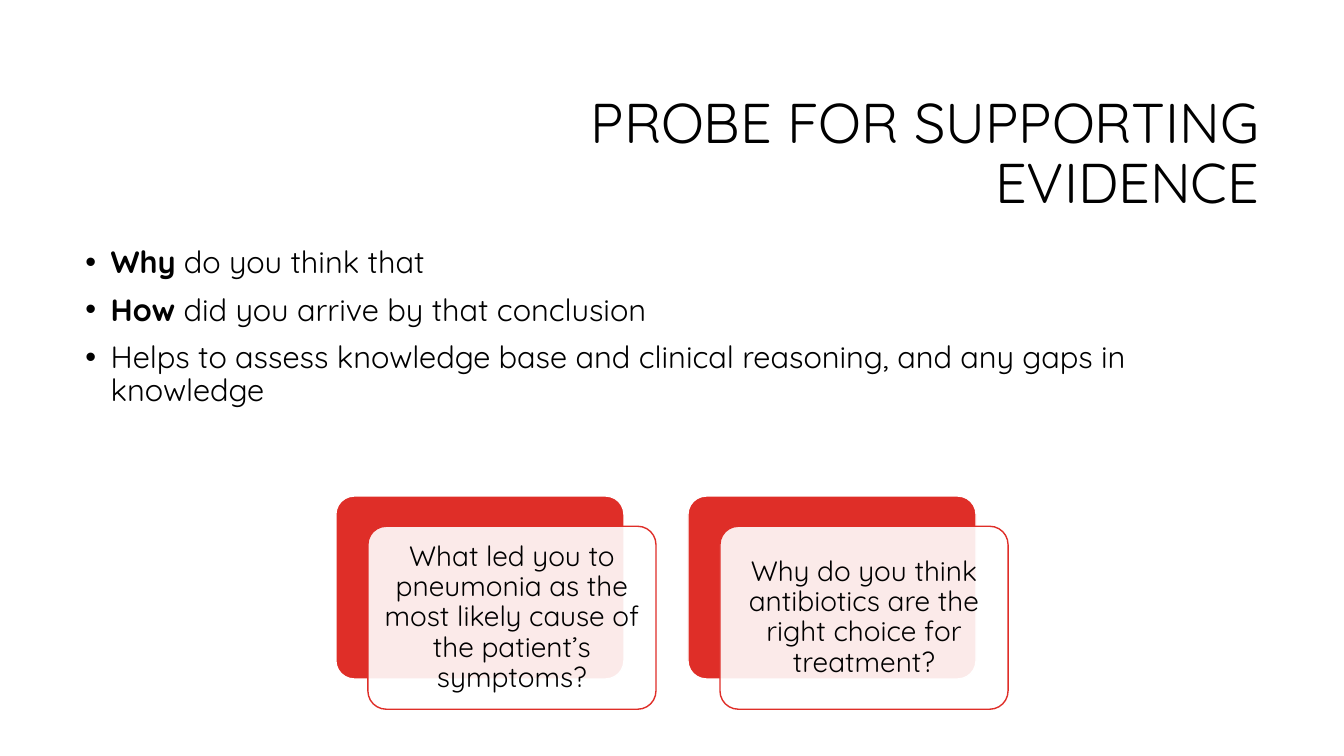
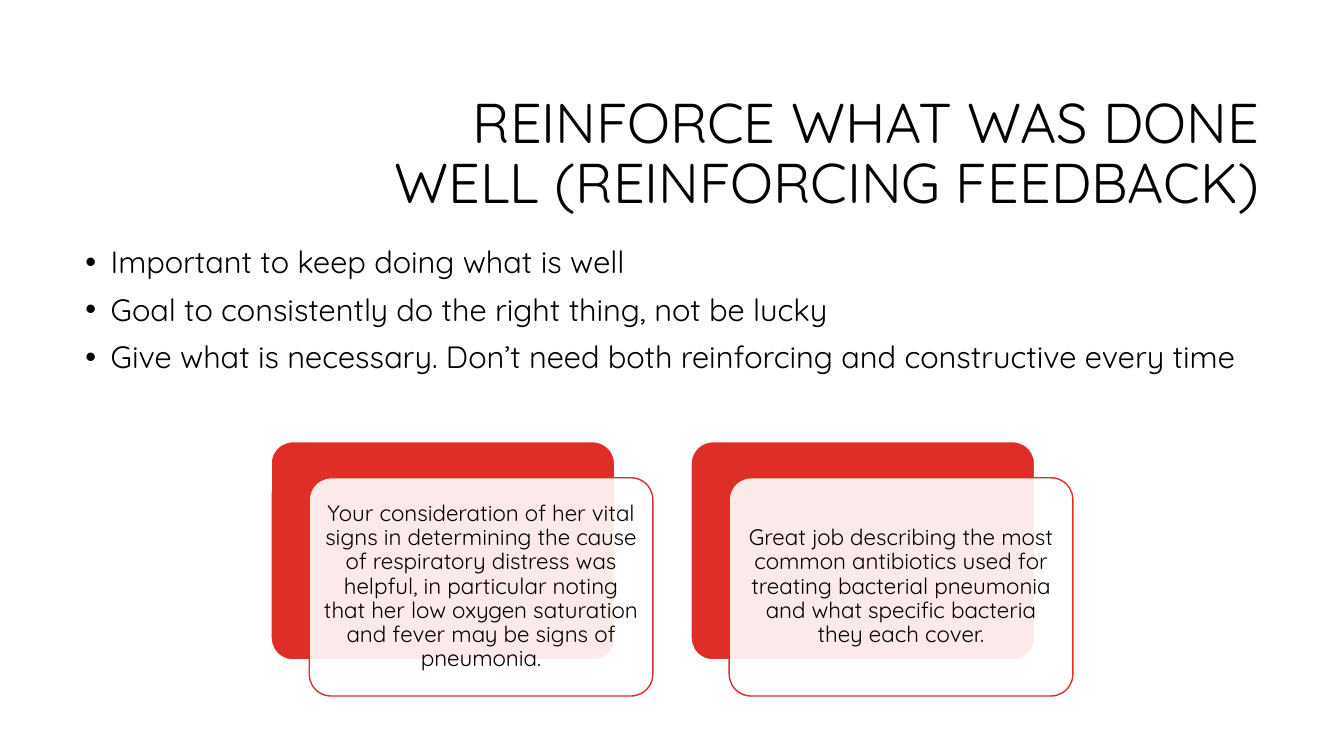
from pptx import Presentation
from pptx import util as u
from pptx.dml.color import RGBColor
from pptx.enum import shapes, text
from pptx.oxml.ns import qn
from lxml import etree

FONT = "Quicksand"
BLACK, WHITE, RED = "000000", "FFFFFF", "DF2E28"
SLIDE_W, SLIDE_H = 33.87, 19.05
TITLE_AREA = (8.05, 2.13, 23.93, 3.58)
POINTS_AREA = (1.9, 6.1, 30.05, 11.18)

SLIDES = [
    {
        "title": "PROBE FOR SUPPORTING EVIDENCE",
        "points": [
            ("Why", " do you think that"),
            ("How", " did you arrive by that conclusion"),
            ("", "Helps to assess knowledge base and clinical reasoning, and any gaps in knowledge"),
        ],
        "examples": [
            "What led you to pneumonia as the most likely cause of the patient’s symptoms?",
            "Why do you think antibiotics are the right choice for treatment?",
        ],
        "card": {"top": 12.5, "width": 7.26, "size": 20, "inset": 0.22},
    },
    {
        "title": "REINFORCE WHAT WAS DONE WELL (REINFORCING FEEDBACK)",
        "points": [
            ("", "Important to keep doing what is well"),
            ("", "Goal to consistently do the right thing, not be lucky"),
            ("", "Give what is necessary. Don’t need both reinforcing and constructive every time"),
        ],
        "examples": [
            "Your consideration of her vital signs in determining the cause of respiratory "
            "distress was helpful, in particular noting that her low oxygen saturation and "
            "fever may be signs of pneumonia.",
            "Great job describing the most common antibiotics used for treating bacterial "
            "pneumonia and what specific bacteria they each cover.",
        ],
        "card": {"top": 11.13, "width": 8.66, "size": 16, "inset": 0.18},
    },
]


def color(value):
    return RGBColor.from_string(value)


def cm(values):
    return [u.Cm(value) for value in values]


def write(shape, paragraphs, size, align=text.PP_ALIGN.LEFT,
          anchor=text.MSO_ANCHOR.TOP, inset=(0.25, 0.13), gap=0, bullet=False):
    frame = shape.text_frame
    frame.word_wrap = True
    frame.vertical_anchor = anchor
    frame.margin_left = frame.margin_right = u.Cm(inset[0])
    frame.margin_top = frame.margin_bottom = u.Cm(inset[1])
    for number, (lead, rest) in enumerate(paragraphs):
        paragraph = frame.add_paragraph() if number else frame.paragraphs[0]
        paragraph.alignment = align
        paragraph.line_spacing = 0.9
        if number:
            paragraph.space_before = u.Pt(gap)
        if bullet:
            properties = paragraph._p.get_or_add_pPr()
            properties.set("marL", str(u.Cm(0.64)))
            properties.set("indent", str(u.Cm(-0.64)))
            etree.SubElement(properties, qn("a:buFont")).set("typeface", "Arial")
            etree.SubElement(properties, qn("a:buChar")).set("char", "•")
        for words, bold in ((lead, True), (rest, False)):
            if words:
                run = paragraph.add_run()
                run.text = words
                run.font.name = FONT
                run.font.size = u.Pt(size)
                run.font.bold = bold
                run.font.color.rgb = color(BLACK)


def add_panel(slide, area, fill, line, opacity=100):
    panel = slide.shapes.add_shape(shapes.MSO_SHAPE.ROUNDED_RECTANGLE, *cm(area))
    panel.adjustments[0] = 0.1
    panel.shadow.inherit = False
    panel.fill.solid()
    panel.fill.fore_color.rgb = color(fill)
    panel.line.color.rgb = color(line)
    panel.line.width = u.Pt(1)
    if opacity < 100:
        tint = panel._element.spPr.find(qn("a:solidFill")).find(qn("a:srgbClr"))
        etree.SubElement(tint, qn("a:alpha")).set("val", str(opacity * 1000))
    return panel


def add_examples(slide, examples, top, width, size, inset):
    height = width * 0.635
    shift_x, shift_y = width / 9, width * 0.105
    pitch = width + 2 * shift_x
    left = (SLIDE_W - pitch * (len(examples) - 1) - width - shift_x) / 2
    for number, example in enumerate(examples):
        x = left + number * pitch
        add_panel(slide, (x, top, width, height), RED, WHITE)
        front = add_panel(slide, (x + shift_x, top + shift_y, width, height),
                          WHITE, RED, opacity=90)
        write(front, [("", example)], size, align=text.PP_ALIGN.CENTER,
              anchor=text.MSO_ANCHOR.MIDDLE, inset=(inset, inset))


def build_slide(deck, content):
    slide = deck.slides.add_slide(deck.slide_layouts[6])
    title = slide.shapes.add_textbox(*cm(TITLE_AREA))
    write(title, [("", content["title"])], 40, align=text.PP_ALIGN.RIGHT,
          anchor=text.MSO_ANCHOR.MIDDLE)
    points = slide.shapes.add_textbox(*cm(POINTS_AREA))
    write(points, content["points"], 22, gap=10, bullet=True)
    add_examples(slide, content["examples"], **content["card"])


def main():
    deck = Presentation()
    deck.slide_width, deck.slide_height = cm((SLIDE_W, SLIDE_H))
    for content in SLIDES:
        build_slide(deck, content)
    deck.save("out.pptx")


if __name__ == "__main__":
    main()
